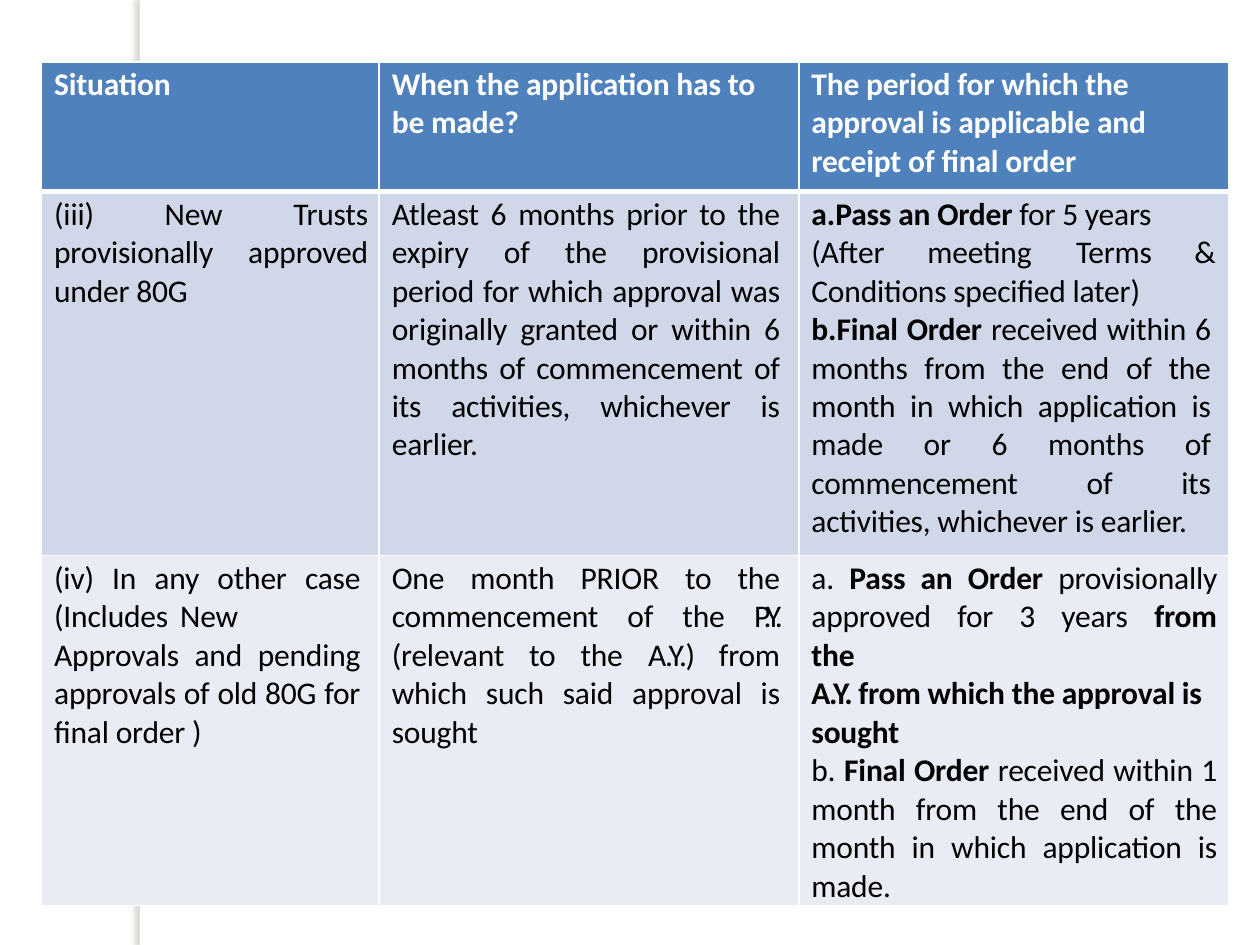
from lxml.etree import SubElement
from pptx import Presentation
from pptx.dml.color import RGBColor
from pptx.enum.shapes import MSO_SHAPE
from pptx.enum.text import PP_ALIGN
from pptx.oxml.ns import qn
from pptx.util import Inches, Pt

COLORS = {
    "white": "FFFFFF", "black": "000000", "shadow": "736F63",
    "header": "4F81BC", "band_dark": "D0D7E8", "band_light": "E9ECF4",
}
COLS = [2.68, 3.33, 3.41]
ROWS = [1.03, 2.89, 2.58]
FILLS = ["header", "band_dark", "band_light"]
BREAK = "\n"


def para(*runs, **fmt):
    """A paragraph: plain strings or (text, format) pairs, plus its own format."""
    return runs, fmt


def bold(text, **fmt):
    return text, {"bold": True, **fmt}


JUSTIFY = PP_ALIGN.JUSTIFY

HEADERS = [
    [para(bold("Situation"))],
    [para(bold("When the application has to be made?"), right=0.25)],
    [para(bold("The period for which the approval is applicable and "
               "receipt of final order"))],
]
NEW_TRUSTS = [
    [para("(iii) New Trusts provisionally approved under 80G", align=JUSTIFY)],
    [para("Atleast 6 months prior to the expiry of the provisional period for "
          "which approval was originally granted or within 6 months of "
          "commencement of its activities, whichever is earlier.",
          align=JUSTIFY, right=0.15)],
    [para(bold("Pass an Order "), "for 5 years", BREAK,
          "(After\tmeeting\tTerms\t&", BREAK, "Conditions specified later)",
          numbered=True, tabs=[0.34, 1.02, 2.2, 3.14]),
     para(bold("Final Order "), "received within 6 months from the end of the "
          "month in which application is made or 6 months of commencement of "
          "its activities, whichever is earlier.",
          numbered=True, align=JUSTIFY, before=0, right=0.14)],
]
OTHER_CASES = [
    [para("(iv) In any other case (Includes\tNew Approvals and pending "
          "approvals of old 80G for final order )",
          align=JUSTIFY, right=0.15, tabs=[2.11])],
    [para("One month PRIOR to the commencement of the ",
          ("P.Y. ", {"tracking": -1.6}), "(relevant to the ",
          ("A.Y.) ", {"tracking": -0.8}),
          "from which such said approval is sought",
          align=JUSTIFY, right=0.15)],
    [para("a. ", bold("Pass an Order "), "provisionally approved for 3 years ",
          bold("from"), BREAK, bold("the"), align=JUSTIFY),
     para(bold("A.Y. ", tracking=-0.9), bold("from which the approval is"),
          before=0),
     para(bold("sought"), before=0),
     para("b. ", bold("Final Order "), "received within 1 month from the end "
          "of the month in which application is made.",
          align=JUSTIFY, before=0.1)],
]


def rgb(name):
    return RGBColor.from_string(COLORS[name])


def add_run(p, text, color="black", bold=False, tracking=-0.1):
    r = p.add_run()
    r.text = text
    r.font.name, r.font.size, r.font.bold = "Calibri", Pt(18), bold
    r.font.color.rgb = rgb(color)
    r.font._element.set("spc", str(round(tracking * 100)))


def write_paragraph(p, runs, color, align=PP_ALIGN.LEFT, before=2.4,
                    right=0.09, numbered=False, tabs=()):
    p.alignment, p.space_before = align, Pt(before)
    pPr = p._p.get_or_add_pPr()
    for key, value in (("marL", 0.1), ("marR", right), ("indent", 0)):
        pPr.set(key, str(Inches(value)))
    if numbered:
        SubElement(pPr, qn("a:buAutoNum"), type="alphaLcPeriod")
    if tabs:
        tab_list = SubElement(pPr, qn("a:tabLst"))
        for pos in tabs:
            SubElement(tab_list, qn("a:tab"), pos=str(Inches(pos)), algn="l")
    for run in runs:
        if run == BREAK:
            p.add_line_break()
        else:
            text, fmt = (run, {}) if isinstance(run, str) else run
            add_run(p, text, color=color, **fmt)


def set_borders(cell, **widths):
    tcPr = cell._tc.get_or_add_tcPr()
    for side in "LRTB":
        ln = SubElement(tcPr, qn(f"a:ln{side}"), w=str(Pt(widths.get(side, 1))))
        fill = SubElement(ln, qn("a:solidFill"))
        SubElement(fill, qn("a:srgbClr"), val=COLORS["white"])


def fill_cell(cell, paragraphs, fill, color):
    cell.margin_left = cell.margin_right = cell.margin_bottom = 0
    cell.margin_top = Inches(0.03)
    cell.fill.solid()
    cell.fill.fore_color.rgb = rgb(fill)
    tf = cell.text_frame
    for i, (runs, fmt) in enumerate(paragraphs):
        p = tf.add_paragraph() if i else tf.paragraphs[0]
        write_paragraph(p, runs, color, **fmt)


def add_side_strip(slide, height):
    sp = slide.shapes.add_shape(MSO_SHAPE.RECTANGLE, Inches(1.11), 0,
                                Inches(0.08), height)
    sp.fill.solid()
    sp.fill.fore_color.rgb = rgb("white")
    sp.line.fill.background()
    sp.shadow.inherit = False
    # Soft shadow to the left
    effects = sp._element.spPr.find(qn("a:effectLst"))
    shadow = SubElement(effects, qn("a:outerShdw"), blurRad=str(Pt(3)),
                        dist=str(Pt(3)), dir="10800000", rotWithShape="0")
    clr = SubElement(shadow, qn("a:srgbClr"), val=COLORS["shadow"])
    SubElement(clr, qn("a:alpha"), val="25000")


def add_approval_table(slide, rows):
    frame = slide.shapes.add_table(len(ROWS), len(COLS), Inches(0.33),
                                   Inches(0.49), Inches(sum(COLS)),
                                   Inches(sum(ROWS)))
    table = frame.table
    for col, width in zip(table.columns, COLS):
        col.width = Inches(width)
    for row, height in zip(table.rows, ROWS):
        row.height = Inches(height)
    for i, cells in enumerate(rows):
        # Thick rule between header and body
        widths = [{"B": 3}, {"T": 3}, {}][i]
        for j, paragraphs in enumerate(cells):
            cell = table.cell(i, j)
            set_borders(cell, **widths)
            fill_cell(cell, paragraphs, FILLS[i], "black" if i else "white")


def main():
    prs = Presentation()
    prs.slide_width, prs.slide_height = Inches(10), Inches(7.5)
    slide = prs.slides.add_slide(prs.slide_layouts[6])
    add_side_strip(slide, prs.slide_height)
    add_approval_table(slide, [HEADERS, NEW_TRUSTS, OTHER_CASES])
    prs.save("out.pptx")


if __name__ == "__main__":
    main()
